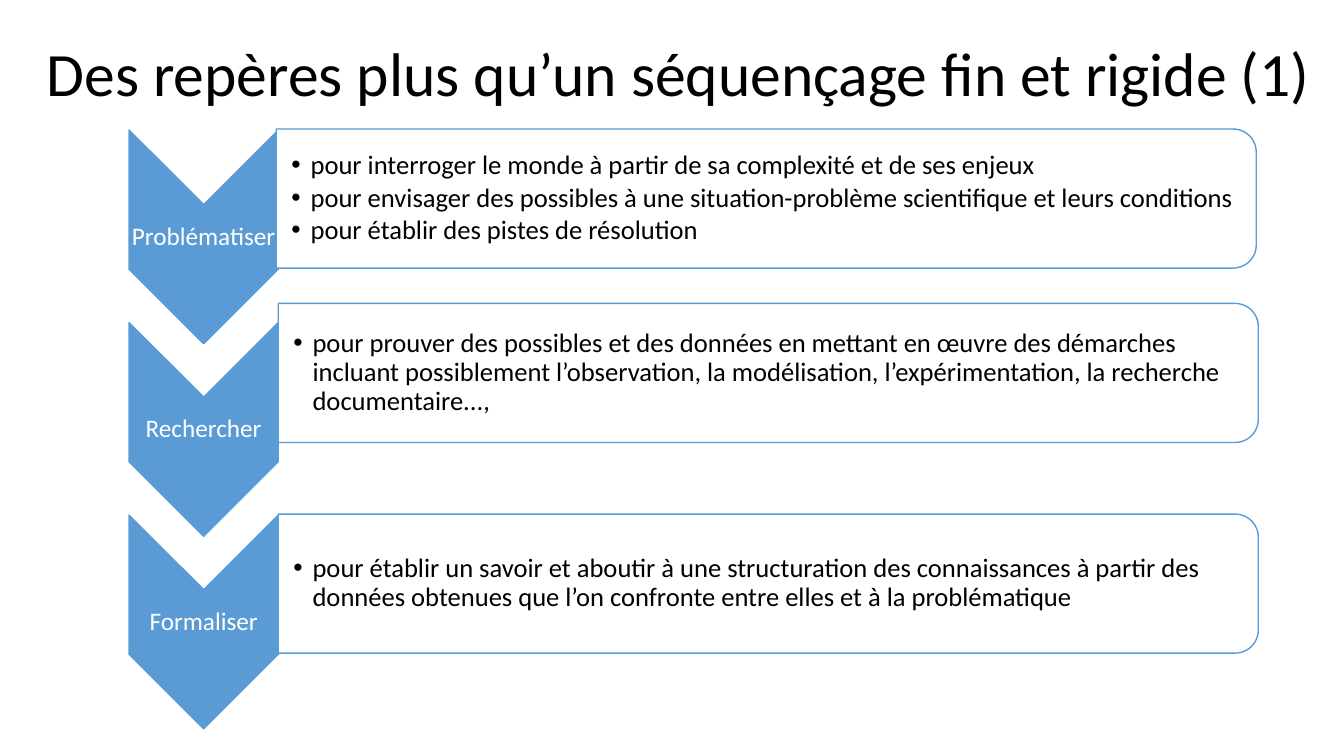
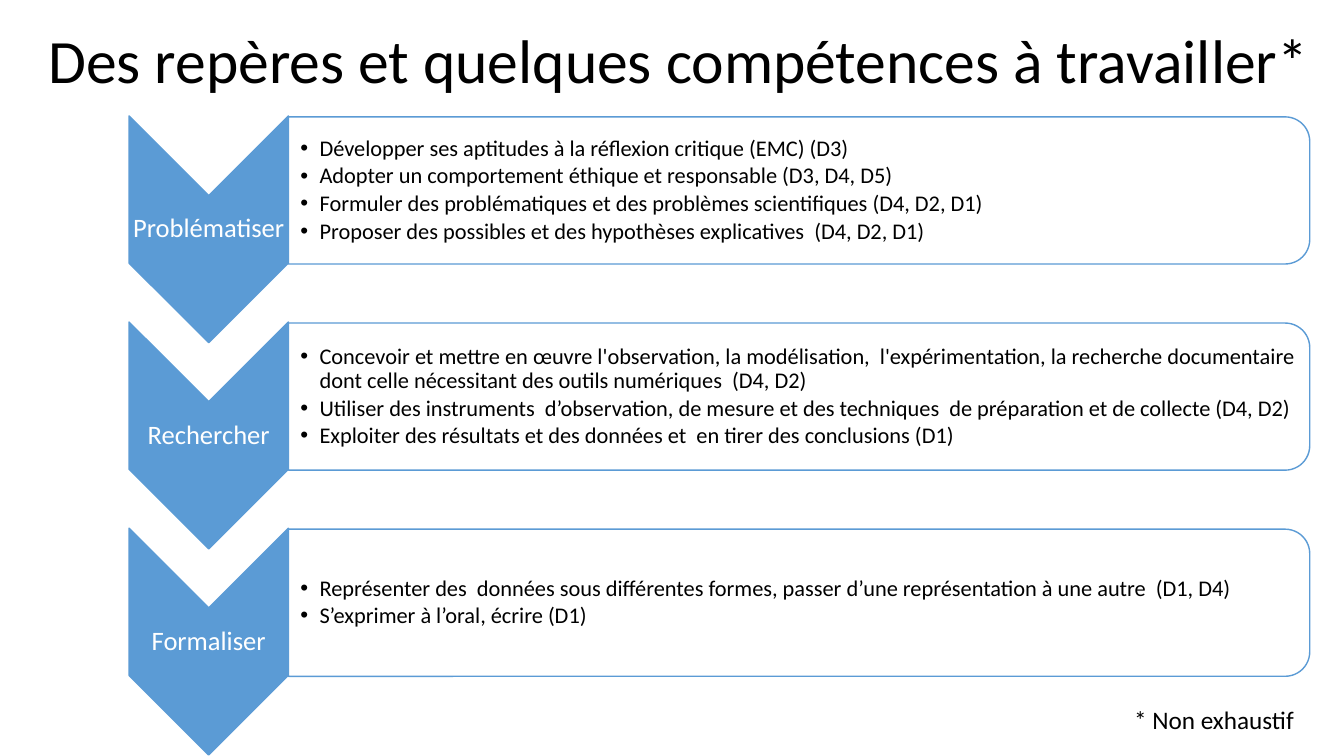
from pptx import Presentation
from pptx.dml.color import RGBColor
from pptx.enum.shapes import MSO_SHAPE as Kind
from pptx.enum.text import MSO_ANCHOR as Anchor, MSO_AUTO_SIZE as Fit, PP_ALIGN as Align
from pptx.oxml.ns import qn
from pptx.util import Inches, Pt
from lxml.etree import SubElement

BLUE, WHITE, BLACK = "5B9BD5", "FFFFFF", "000000"
FONT = "Calibri"
LEFT = 1.28
INDENT = 0.19
PAD = 0.07
STEPS = ["Problématiser", "Rechercher", "Formaliser"]

# arrow: top, pitch, width, height; panel: width, height, then (left, top) of each
SLIDES = [
    dict(
        title="Des repères plus qu’un séquençage fin et rigide (1)", top=0.38,
        arrow=(1.29, 1.91, 1.48, 2.12), panel=(9.72, 1.38),
        spots=[(2.74, 1.28), (2.76, 3.01), (2.76, 5.1)],
        sizes=(18, 19), inset=0.15, note=None,
        points=[
            ["pour interroger le monde à partir de sa complexité et de ses enjeux",
             "pour envisager des possibles à une situation-problème scientifique et leurs conditions",
             "pour établir des pistes de résolution"],
            ["pour prouver des possibles et des données en mettant en œuvre des démarches "
             "incluant possiblement l’observation, la modélisation, l’expérimentation, "
             "la recherche documentaire...,"],
            ["pour établir un savoir et aboutir à une structuration des connaissances à partir "
             "des données obtenues que l’on confronte entre elles et à la problématique"],
        ]),
    dict(
        title="Des repères et quelques compétences à travailler*", top=0.25,
        arrow=(1.15, 2.045, 1.58, 2.25), panel=(10.13, 1.46),
        spots=[(2.86, 1.16 + 2.045 * i) for i in range(3)],
        sizes=(19, 16), inset=0.12, note="* Non exhaustif",
        points=[
            ["Développer ses aptitudes à la réflexion critique (EMC) (D3)",
             "Adopter un comportement éthique et responsable (D3, D4, D5)",
             "Formuler des problématiques et des problèmes scientifiques (D4, D2, D1)",
             "Proposer des possibles et des hypothèses explicatives  (D4, D2, D1)"],
            ["Concevoir et mettre en œuvre l'observation, la modélisation,  l'expérimentation, "
             "la recherche documentaire dont celle nécessitant des outils numériques  (D4, D2)",
             "Utiliser des instruments  d’observation, de mesure et des techniques  "
             "de préparation et de collecte (D4, D2)",
             "Exploiter des résultats et des données et  en tirer des conclusions (D1)"],
            ["Représenter des  données sous différentes formes, passer d’une représentation "
             "à une autre  (D1, D4)",
             "S’exprimer à l’oral, écrire (D1)"],
        ]),
]


def rgb(color):
    return RGBColor.from_string(color)


def bullet(para):
    props = para._p.get_or_add_pPr()
    props.set("marL", str(Inches(INDENT)))
    props.set("indent", str(-Inches(INDENT)))
    SubElement(props, qn("a:buFont"), typeface="Arial")
    SubElement(props, qn("a:buChar"), char="•")


def write(shape, lines, size, color=BLACK, align=Align.LEFT, anchor=Anchor.TOP,
          spacing=0.9, after=0, insets=(0.1, 0.05, 0.1, 0.05), wrap=True, bullets=False):
    """Fill a shape with one paragraph per line; after is a share of the text size."""
    frame = shape.text_frame
    frame.auto_size = Fit.NONE
    frame.word_wrap = wrap
    frame.vertical_anchor = anchor
    (frame.margin_left, frame.margin_top,
     frame.margin_right, frame.margin_bottom) = map(Inches, insets)
    for i, line in enumerate(lines):
        para = frame.add_paragraph() if i else frame.paragraphs[0]
        para.alignment = align
        para.line_spacing = spacing
        para.space_before = Pt(0)
        para.space_after = Pt(size * after)
        if bullets:
            bullet(para)
        run = para.add_run()
        run.text = line
        run.font.name, run.font.size = FONT, Pt(size)
        run.font.color.rgb = rgb(color)


def box(slide, *area):
    return slide.shapes.add_textbox(*map(Inches, area))


def turned(slide, kind, left, top, width, height, fill):
    """Add a shape turned a quarter right that covers the given area."""
    shift = (width - height) / 2
    area = (left + shift, top - shift, height, width)
    shape = slide.shapes.add_shape(kind, *map(Inches, area))
    shape.rotation = 90
    shape.shadow.inherit = False
    shape.fill.solid()
    shape.fill.fore_color.rgb = rgb(fill)
    shape.line.color.rgb = rgb(BLUE)
    shape.line.width = Pt(1)


def draw_step(slide, data, i):
    first, pitch, wide, high = data["arrow"]
    top = first + i * pitch
    label, body = data["sizes"]
    turned(slide, Kind.CHEVRON, LEFT, top, wide, high, BLUE)
    write(box(slide, LEFT, top + wide / 2, wide, high - wide), [STEPS[i]], label,
          color=WHITE, align=Align.CENTER, anchor=Anchor.MIDDLE, after=0.35,
          insets=(0.01,) * 4, wrap=False)

    left, top = data["spots"][i]
    wide, high = data["panel"]
    turned(slide, Kind.ROUND_2_SAME_RECTANGLE, left, top, wide, high, WHITE)
    write(box(slide, left, top + PAD, wide - PAD, high - 2 * PAD), data["points"][i], body,
          anchor=Anchor.MIDDLE, after=0.15,
          insets=(data["inset"], 0.01, 0.01, 0.01), bullets=True)


def draw_slide(deck, data):
    slide = deck.slides.add_slide(deck.slide_layouts[5])
    title = slide.shapes.title
    title.left, title.top, title.width, title.height = map(
        Inches, (0.23, data["top"], 13.01, 0.91))
    write(title, [data["title"]], 44, align=Align.CENTER)
    for i in range(len(STEPS)):
        draw_step(slide, data, i)
    if data["note"]:
        write(box(slide, 11.15, 6.94, 1.85, 0.4), [data["note"]], 18, spacing=1.0)


def main():
    deck = Presentation()
    deck.slide_width, deck.slide_height = Inches(13.33), Inches(7.5)
    for data in SLIDES:
        draw_slide(deck, data)
    deck.save("out.pptx")


if __name__ == "__main__":
    main()
